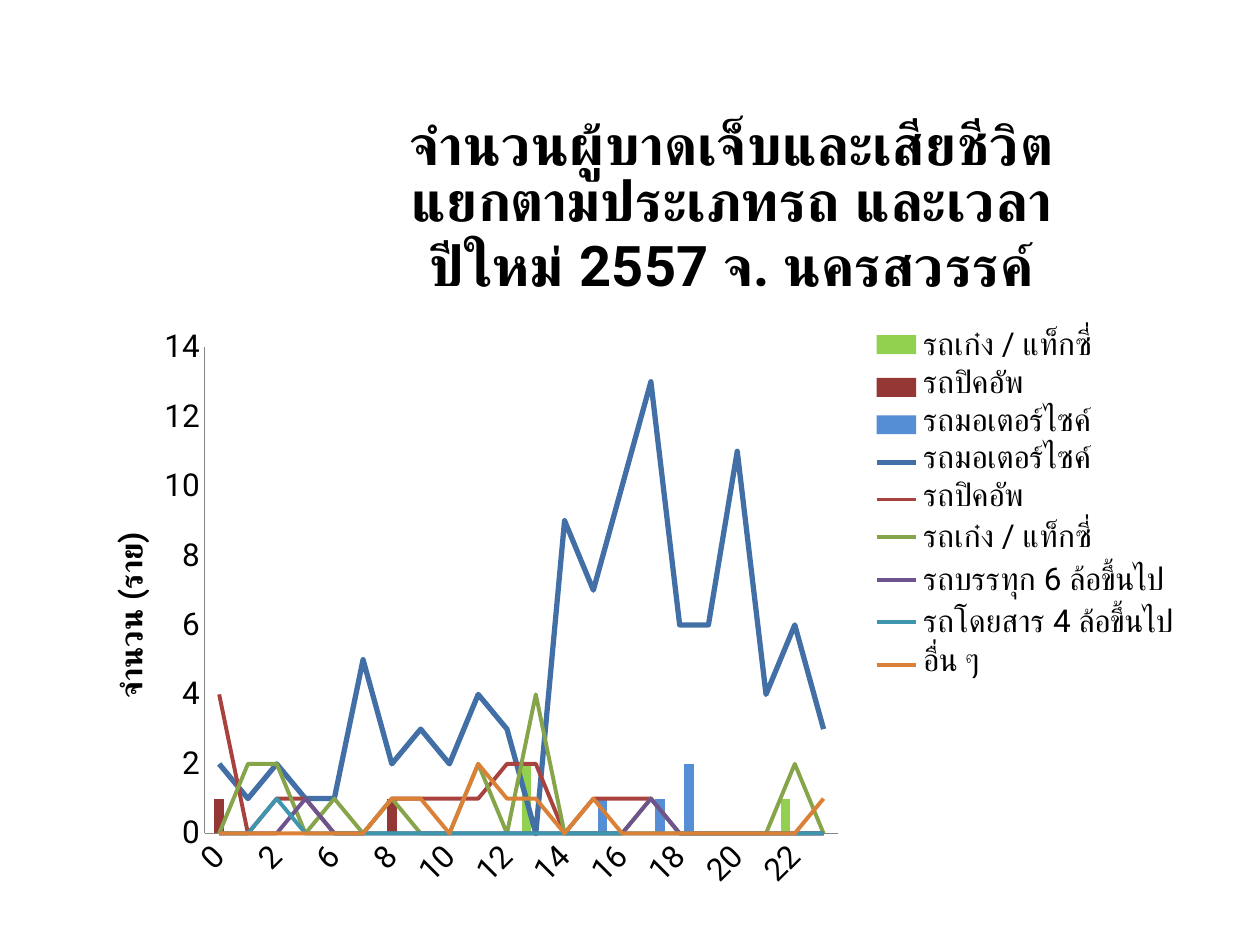
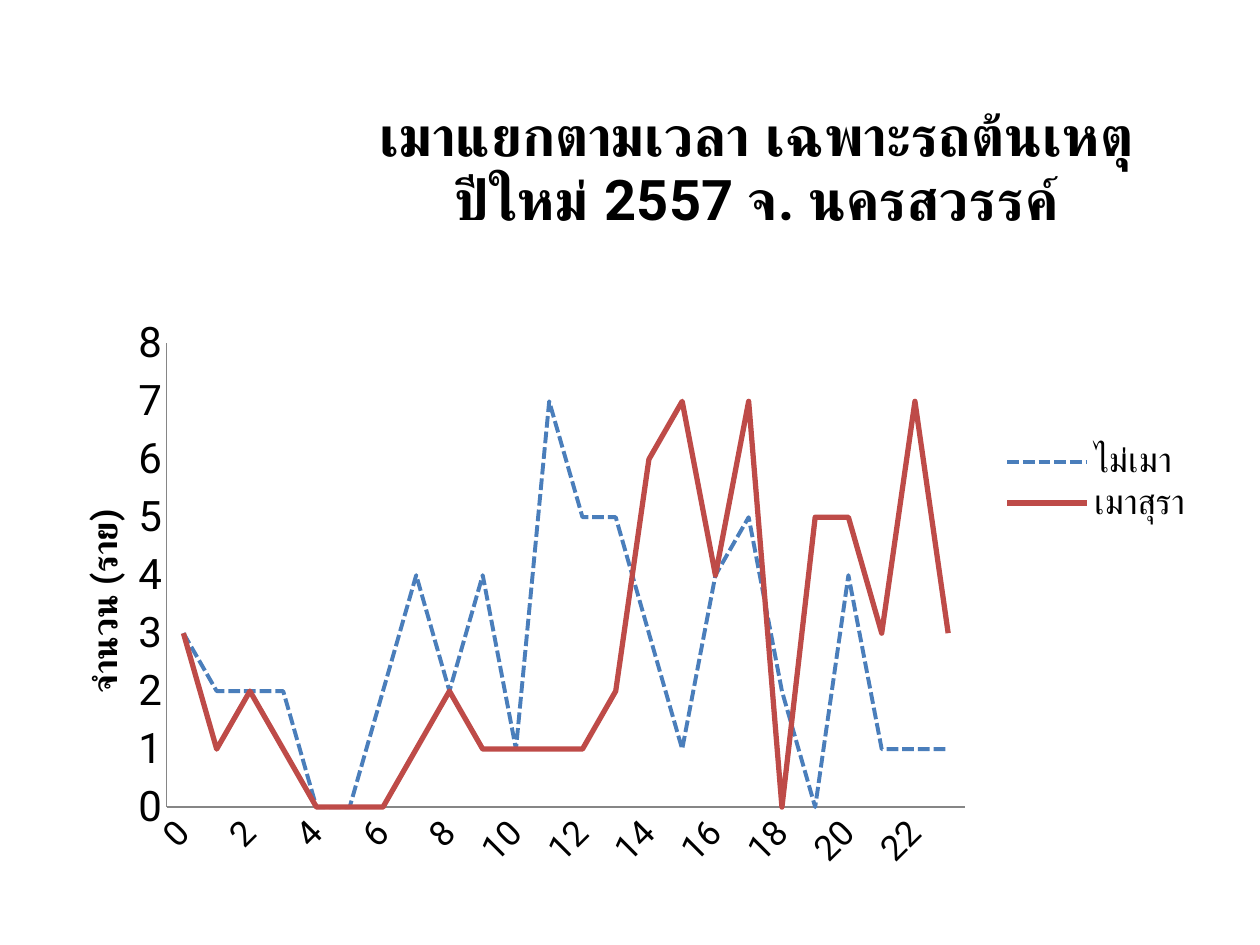
"""Build two slides of road-accident charts by hour of day."""
from dataclasses import dataclass
from typing import Optional

from lxml.etree import SubElement
from pptx import Presentation
from pptx.chart.data import CategoryChartData
from pptx.dml.color import RGBColor
from pptx.enum.chart import XL_CHART_TYPE, XL_LEGEND_POSITION, XL_MARKER_STYLE, XL_TICK_MARK
from pptx.enum.dml import MSO_LINE
from pptx.oxml.ns import qn
from pptx.util import Inches, Pt

FONT = "Roboto"
BLACK = RGBColor(0x00, 0x00, 0x00)
AXIS_GREY = RGBColor(0x86, 0x86, 0x86)
LIME = RGBColor(0x92, 0xD0, 0x50)
MAROON = RGBColor(0x95, 0x37, 0x35)
SKY = RGBColor(0x55, 0x8E, 0xD5)
BLUE = RGBColor(0x41, 0x6F, 0xA6)
RED = RGBColor(0xA8, 0x42, 0x3F)
GREEN = RGBColor(0x86, 0xA4, 0x4A)
PURPLE = RGBColor(0x6E, 0x54, 0x8D)
TEAL = RGBColor(0x3D, 0x96, 0xAE)
ORANGE = RGBColor(0xDA, 0x81, 0x37)
SOBER_BLUE = RGBColor(0x4A, 0x7E, 0xBB)
DRUNK_RED = RGBColor(0xBE, 0x4B, 0x48)

SLIDE_W, SLIDE_H = Inches(10), Inches(7.5)
TITLE_SIZE = 32
AXIS_TITLE = "จำนวน (ราย)"
PLACE = "ปีใหม่ 2557 จ. นครสวรรค์"
CAR, PICKUP, MOTORCYCLE = "รถเก๋ง / แท็กซี่", "รถปิคอัพ", "รถมอเตอร์ไซค์"


@dataclass(frozen=True)
class Series:
    """One row of hourly counts; a width makes it a line, none a bar."""
    name: str
    vals: list[int]
    color: RGBColor
    width: Optional[float] = None
    dash: Optional[MSO_LINE] = None


@dataclass(frozen=True)
class ChartSlide:
    """A chart whose boxes are shares of the slide or of the chart."""
    title: str
    hours: list[int]
    series: list[Series]
    box: tuple[float, ...]
    plot: tuple[float, ...]
    legend: tuple[float, ...]
    title_at: tuple[float, ...]
    axis_title_at: tuple[float, ...]
    size: int
    value_size: int
    top: int
    step: int


def at_hours(count: int, hits: dict[int, int]) -> list[int]:
    """Return zeros with the given positions filled in."""
    return [hits.get(i, 0) for i in range(count)]


VEHICLE_HOURS = [h for h in range(24) if h not in (4, 5)]
N = len(VEHICLE_HOURS)

VEHICLES = ChartSlide(
    title=f"จำนวนผู้บาดเจ็บและเสียชีวิต\nแยกตามประเภทรถ และเวลา\n{PLACE}",
    hours=VEHICLE_HOURS,
    series=[
        Series(CAR, at_hours(N, {11: 2, 20: 1}), LIME),
        Series(PICKUP, at_hours(N, {0: 1, 6: 1}), MAROON),
        Series(MOTORCYCLE, at_hours(N, {13: 1, 15: 1, 16: 2}), SKY),
        Series(MOTORCYCLE, [2, 1, 2, 1, 1, 5, 2, 3, 2, 4, 3, 0, 9, 7, 10, 13, 6, 6, 11, 4, 6, 3],
               BLUE, 3),
        Series(PICKUP, [4, 0, 1, 1, 0, 0, 1, 1, 1, 1, 2, 2, 0, 1, 1, 1, 0, 0, 0, 0, 0, 0],
               RED, 2.25),
        Series(CAR, [0, 2, 2, 0, 1, 0, 1, 0, 0, 2, 0, 4, 0, 0, 0, 1, 0, 0, 0, 0, 2, 0],
               GREEN, 2.25),
        Series("รถบรรทุก 6 ล้อขึ้นไป", at_hours(N, {3: 1, 15: 1}), PURPLE, 2.25),
        Series("รถโดยสาร 4 ล้อขึ้นไป", at_hours(N, {2: 1}), TEAL, 2.25),
        Series("อื่น ๆ", at_hours(N, {6: 1, 7: 1, 9: 2, 10: 1, 11: 1, 13: 1, 21: 1}),
               ORANGE, 2.25),
    ],
    box=(0.056, 0.104, 0.888, 0.855), plot=(0.12, 0.308, 0.566, 0.602),
    legend=(0.713, 0.275, 0.28, 0.45), title_at=(0.3, 0.02), axis_title_at=(0.03, 0.53),
    size=18, value_size=18, top=14, step=2)

ALCOHOL = ChartSlide(
    title=f"เมาแยกตามเวลา เฉพาะรถต้นเหตุ\n{PLACE}",
    hours=list(range(24)),
    series=[
        Series("ไม่เมา", [3, 2, 2, 2, 0, 0, 2, 4, 2, 4, 1, 7, 5, 5, 3, 1, 4, 5, 2, 0, 4, 1, 1, 1],
               SOBER_BLUE, 2.25, MSO_LINE.SQUARE_DOT),
        Series("เมาสุรา", [3, 1, 2, 1, 0, 0, 0, 1, 2, 1, 1, 1, 1, 2, 6, 7, 4, 7, 0, 5, 5, 3, 7, 3],
               DRUNK_RED, 3),
    ],
    box=(0.031, 0.083, 0.922, 0.855), plot=(0.11, 0.328, 0.687, 0.574),
    legend=(0.825, 0.445, 0.17, 0.11), title_at=(0.29, 0.033), axis_title_at=(0.03, 0.525),
    size=20, value_size=24, top=8, step=1)


def set_font(font, size: float, bold: bool = False) -> None:
    """Apply the shared typeface at a given size and weight."""
    for key, value in dict(name=FONT, size=Pt(size), bold=bold).items():
        setattr(font, key, value)
    font.color.rgb = BLACK


def write_title(owner, text: str, size: float) -> None:
    """Write a bold chart or axis title."""
    tf = owner.text_frame
    tf.text = text
    for p in tf.paragraphs:
        for r in p.runs:
            set_font(r.font, size, True)


def place(el, shares: tuple[float, ...]) -> None:
    """Give a chart part a manual layout in shares of the chart."""
    for old in el.findall(qn("c:layout")):
        el.remove(old)
    index = sum(child.tag in (qn("c:tx"), qn("c:legendPos")) for child in el)
    layout = el.makeelement(qn("c:layout"), {})
    el.insert(index, layout)
    manual = SubElement(layout, qn("c:manualLayout"))
    if el.tag == qn("c:plotArea"):
        SubElement(manual, qn("c:layoutTarget"), val="inner")
    for key in ("xMode", "yMode"):
        SubElement(manual, qn(f"c:{key}"), val="edge")
    for key, share in zip("xywh", shares):
        SubElement(manual, qn(f"c:{key}"), val=str(share))


def move_to_lines(chart, specs: list[Series]) -> None:
    """Move the line series of a column chart into a line plot on the same axes."""
    bar = chart.plots[0]._element
    line = bar.makeelement(qn("c:lineChart"), {})
    SubElement(line, qn("c:grouping"), val="standard")
    SubElement(line, qn("c:varyColors"), val="0")
    for ser, spec in zip(bar.findall(qn("c:ser")), specs):
        if spec.width:
            for invert in ser.findall(qn("c:invertIfNegative")):
                ser.remove(invert)
            line.append(ser)
    SubElement(line, qn("c:marker"), val="1")
    for ax in bar.findall(qn("c:axId")):
        SubElement(line, qn("c:axId"), val=ax.get("val"))
    bar.addnext(line)


def style_series(chart, specs: list[Series]) -> None:
    """Colour bars and lines in series order."""
    series = sorted((s for plot in chart.plots for s in plot.series), key=lambda s: s.index)
    for s, spec in zip(series, specs):
        if not spec.width:
            s.format.fill.solid()
            s.format.fill.fore_color.rgb = spec.color
            continue
        line = s.format.line
        line.color.rgb = spec.color
        line.width = Pt(spec.width)
        if spec.dash:
            line.dash_style = spec.dash
        s.marker.style = XL_MARKER_STYLE.NONE
        s.smooth = False


def style_axes(chart, spec: ChartSlide) -> None:
    """Set scales, labels and the value title."""
    cat, val = chart.category_axis, chart.value_axis
    for axis, size in ((cat, spec.size), (val, spec.value_size)):
        for key, value in dict(has_major_gridlines=False, major_tick_mark=XL_TICK_MARK.NONE,
                               minor_tick_mark=XL_TICK_MARK.NONE).items():
            setattr(axis, key, value)
        axis.format.line.color.rgb = AXIS_GREY
        axis.format.line.width = Pt(0.75)
        set_font(axis.tick_labels.font, size)
    for key, value in dict(minimum_scale=0, maximum_scale=spec.top, major_unit=spec.step).items():
        setattr(val, key, value)
    cat._element.find(f"{qn('c:txPr')}/{qn('a:bodyPr')}").set("rot", "-2700000")
    skip = cat._element.makeelement(qn("c:tickLblSkip"), {"val": "2"})
    cat._element.find(qn("c:noMultiLvlLbl")).addprevious(skip)
    write_title(val.axis_title, AXIS_TITLE, spec.size)
    body = val.axis_title.text_frame._txBody.find(qn("a:bodyPr"))
    body.set("rot", "-5400000")
    body.set("vert", "horz")
    place(val.axis_title._element, spec.axis_title_at)


def add_chart_slide(prs, spec: ChartSlide) -> None:
    """Add a blank slide holding one chart."""
    s = prs.slides.add_slide(prs.slide_layouts[6])
    data = CategoryChartData()
    data.categories = [str(h) for h in spec.hours]
    for row in spec.series:
        data.add_series(row.name, row.vals)
    has_bars = any(not row.width for row in spec.series)
    kind = XL_CHART_TYPE.COLUMN_CLUSTERED if has_bars else XL_CHART_TYPE.LINE
    x, y, w, h = (int(share * side) for share, side in zip(spec.box, (SLIDE_W, SLIDE_H) * 2))
    chart = s.shapes.add_chart(kind, x, y, w, h, data).chart
    set_font(chart.font, spec.size)
    chart.plots[0].vary_by_categories = False
    if has_bars:
        chart.plots[0].gap_width = 11
        move_to_lines(chart, spec.series)
    style_series(chart, spec.series)
    style_axes(chart, spec)
    write_title(chart.chart_title, spec.title, TITLE_SIZE)
    chart.has_legend = True
    chart.legend.position = XL_LEGEND_POSITION.RIGHT
    chart.legend.include_in_layout = False
    set_font(chart.legend.font, spec.size)
    place(chart.chart_title._element, spec.title_at)
    place(chart.legend._element, spec.legend)
    place(chart._chartSpace.chart.plotArea, spec.plot)


def main() -> None:
    """Build and save the presentation."""
    prs = Presentation()
    prs.slide_width, prs.slide_height = SLIDE_W, SLIDE_H
    for spec in (VEHICLES, ALCOHOL):
        add_chart_slide(prs, spec)
    prs.save("out.pptx")


if __name__ == "__main__":
    main()
